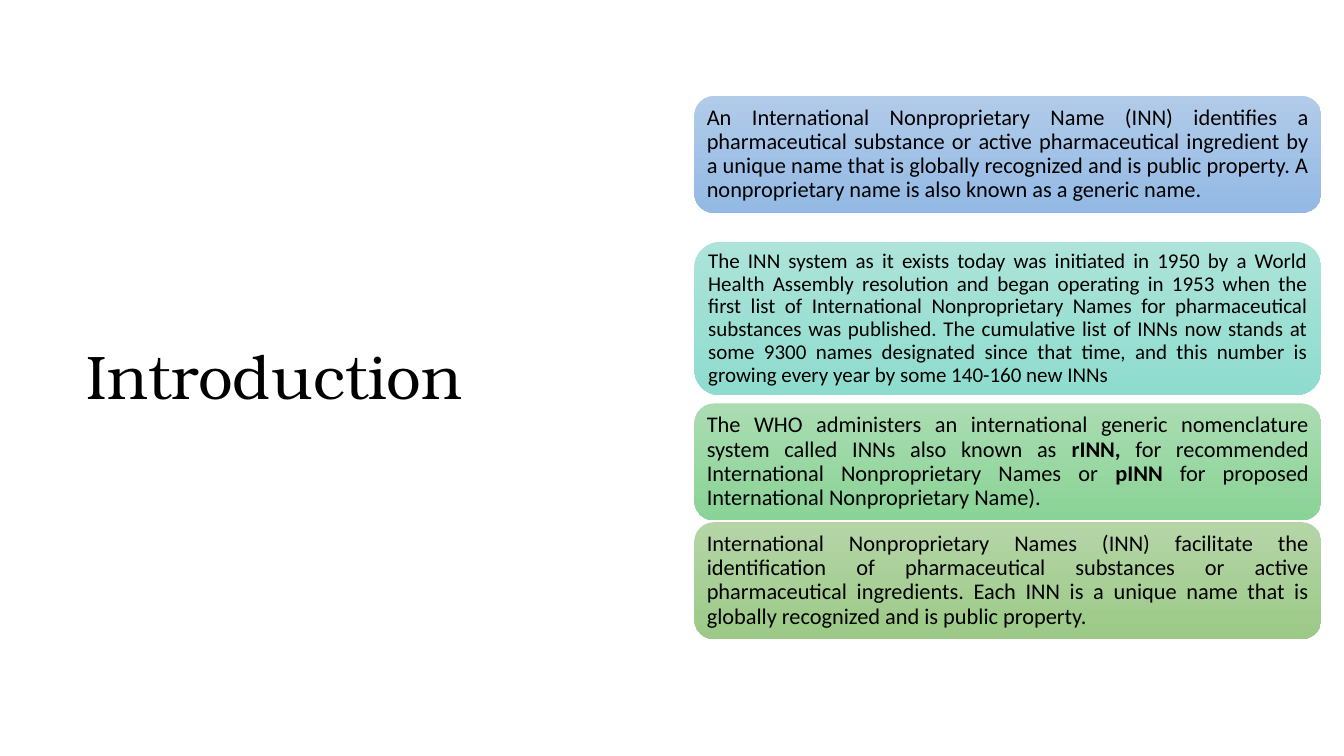
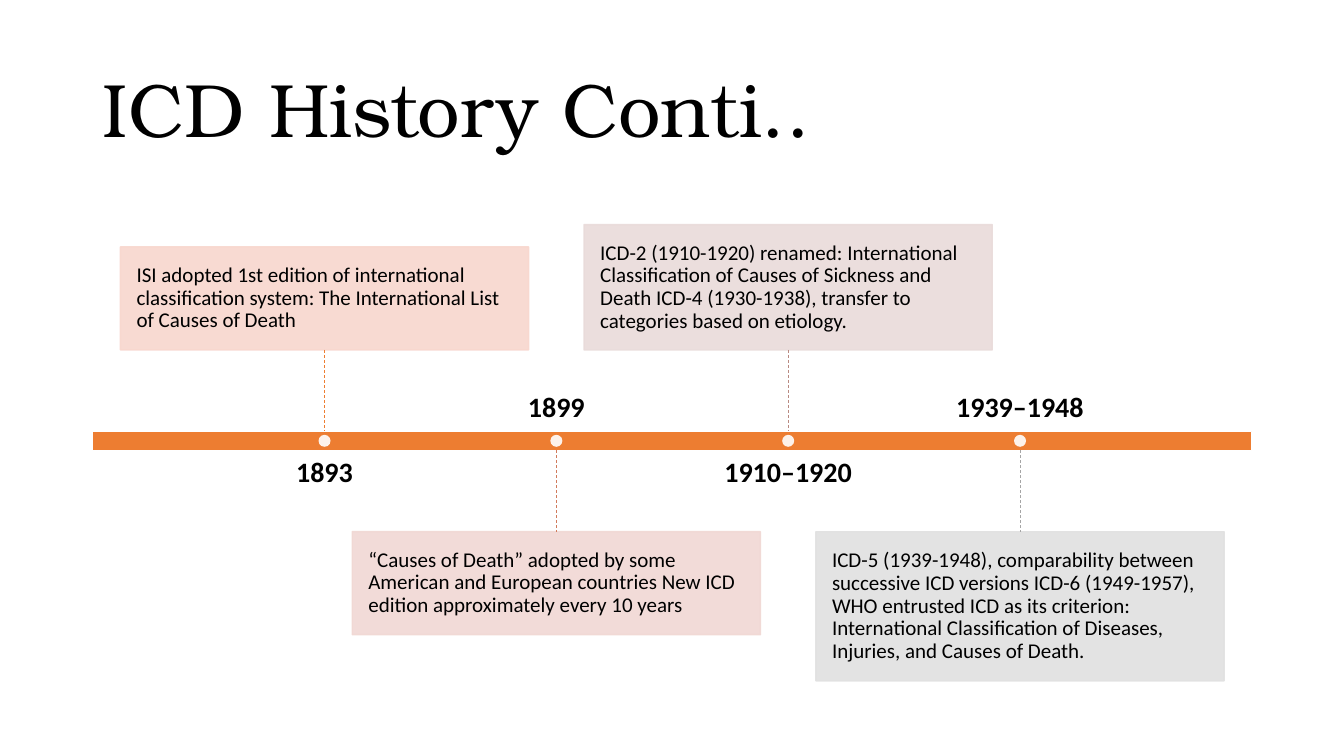
from lxml import etree
from pptx import Presentation
from pptx import util as u
from pptx.dml.color import RGBColor
from pptx.enum import dml, shapes, text
from pptx.oxml.ns import qn

Pt = u.Pt
COLORS = {"text": "000000", "white": "FFFFFF", "axis": "ED7D31"}
TITLE_FONT = "TeX Gyre Bonum"
BODY_FONT = "Calibri"


def write_text(shape, runs, size, font=BODY_FONT, align=text.PP_ALIGN.LEFT,
               anchor=text.MSO_ANCHOR.MIDDLE, margin=0):
    frame = shape.text_frame
    frame.word_wrap = True
    frame.auto_size = text.MSO_AUTO_SIZE.NONE
    frame.vertical_anchor = anchor
    frame.margin_left = frame.margin_right = Pt(margin)
    frame.margin_top = frame.margin_bottom = Pt(margin)
    paragraph = frame.paragraphs[0]
    paragraph.alignment = align
    paragraph.line_spacing = 0.9
    for wording, bold in runs:
        run = paragraph.add_run()
        run.text = wording
        run.font.name = font
        run.font.size = Pt(size)
        run.font.bold = bold
        run.font.color.rgb = RGBColor.from_string(COLORS["text"])


def add_titled_slide(wording, size, left, top, width, height):
    slide = presentation.slides.add_slide(presentation.slide_layouts[5])
    title = slide.shapes.title
    title.left, title.top = Pt(left), Pt(top)
    title.width, title.height = Pt(width), Pt(height)
    write_text(title, [(wording, False)], size, font=TITLE_FONT, margin=7.2)
    return slide


presentation = Presentation()
presentation.slide_width = Pt(960)
presentation.slide_height = Pt(540)

slide = add_titled_slide("Introduction", 44, 54.7, 56.9, 426.2, 428.4)
facts = [
    (68.5, 83.5, 16, "B1CBE9", "93B9E4", [
        ("An International Nonproprietary Name (INN) identifies a pharmaceutical "
         "substance or active pharmaceutical ingredient by a unique name that is "
         "globally recognized and is public property. A nonproprietary name is "
         "also known as a generic name.", False)]),
    (172.8, 109.4, 15, "ADE3D9", "8EDCCE", [
        ("The INN system as it exists today was initiated in 1950 by a World Health "
         "Assembly resolution and began operating in 1953 when the first list of "
         "International Nonproprietary Names for pharmaceutical substances was "
         "published. The cumulative list of INNs now stands at some 9300 names "
         "designated since that time, and this number is growing every year by "
         "some 140-160 new INNs", False)]),
    (288.2, 83.5, 16, "AADCB2", "8AD396", [
        ("The WHO administers an international generic nomenclature system called "
         "INNs also known as ", False),
        ("rINN, ", True),
        ("for recommended International Nonproprietary Names or ", False),
        ("pINN ", True),
        ("for proposed International Nonproprietary Name).", False)]),
    (373, 83.5, 16, "B5D5A7", "9CC987", [
        ("International Nonproprietary Names (INN) facilitate the identification of "
         "pharmaceutical substances or active pharmaceutical ingredients. Each INN "
         "is a unique name that is globally recognized and is public property.",
         False)]),
]
for top, height, size, light, dark, runs in facts:
    panel = slide.shapes.add_shape(shapes.MSO_SHAPE.ROUNDED_RECTANGLE,
                                   Pt(496), Pt(top), Pt(447.8), Pt(height))
    panel.shadow.inherit = False
    panel.line.fill.background()
    panel.fill.gradient()
    panel.fill.gradient_angle = 270
    for stop, color in zip(panel.fill.gradient_stops, (light, dark)):
        stop.color.rgb = RGBColor.from_string(color)
    write_text(panel, runs, size, align=text.PP_ALIGN.JUSTIFY, margin=size * 0.3)

slide = add_titled_slide("ICD History Conti..", 54, 66.2, 28.8, 774.7, 104.4)
axis_left, axis_top, axis_width, axis_height = 66.2, 308.2, 828, 13.4
axis_bottom = axis_top + axis_height
card_width, label_width, label_height = 291.6, 265, 38.9
stem, label_gap, dot_size = 58.2, 6, 8.6

axis = slide.shapes.add_shape(shapes.MSO_SHAPE.RECTANGLE, Pt(axis_left), Pt(axis_top),
                              Pt(axis_width), Pt(axis_height))
axis.shadow.inherit = False
axis.fill.solid()
axis.fill.fore_color.rgb = RGBColor.from_string(COLORS["axis"])
axis.line.color.rgb = RGBColor.from_string(COLORS["white"])
axis.line.width = Pt(1)

events = [
    ("1893", 73.6, "F8D7CE", "ED7D31",
     "ISI adopted 1st edition of international classification system: "
     "The International List of Causes of Death"),
    ("1899", 73.6, "F1D8D4", "D17B5C",
     "“Causes of Death” adopted by some American and European countries "
     "New ICD edition approximately every 10 years"),
    ("1910–1920", 89.6, "E9DBDA", "B98A82",
     "ICD-2 (1910-1920) renamed: International Classification of Causes of "
     "Sickness and Death ICD-4 (1930-1938), transfer to categories based on etiology."),
    ("1939–1948", 106.6, "E1E1E1", "A5A5A5",
     "ICD-5 (1939-1948), comparability between successive ICD versions ICD-6 "
     "(1949-1957), WHO entrusted ICD as its criterion: International "
     "Classification of Diseases, Injuries, and Causes of Death."),
]
for index, (years, height, card_color, stem_color, wording) in enumerate(events):
    center = axis_left + axis_width / (len(events) + 1) * (index + 1)
    if index % 2 == 0:
        stem_start, stem_end = axis_top - stem, axis_top
        card_top = stem_start - height
        label_top, label_anchor = axis_bottom + label_gap, text.MSO_ANCHOR.TOP
    else:
        stem_start, stem_end = axis_bottom, axis_bottom + stem
        card_top = stem_end
        label_top = axis_top - label_gap - label_height
        label_anchor = text.MSO_ANCHOR.BOTTOM

    label = slide.shapes.add_textbox(Pt(center - label_width / 2), Pt(label_top),
                                     Pt(label_width), Pt(label_height))
    write_text(label, [(years, True)], 20, align=text.PP_ALIGN.CENTER,
               anchor=label_anchor)

    card = slide.shapes.add_shape(shapes.MSO_SHAPE.RECTANGLE,
                                  Pt(center - card_width / 2), Pt(card_top),
                                  Pt(card_width), Pt(height))
    write_text(card, [(wording, False)], 15, margin=11.5)

    connector = slide.shapes.add_connector(shapes.MSO_CONNECTOR.STRAIGHT, Pt(center),
                                           Pt(stem_start), Pt(center), Pt(stem_end))
    connector.line.color.rgb = RGBColor.from_string(stem_color)
    connector.line.width = Pt(0.5)
    connector.line.dash_style = dml.MSO_LINE.DASH
    etree.SubElement(connector._element.spPr, qn("a:effectLst"))

    dot = slide.shapes.add_shape(shapes.MSO_SHAPE.OVAL, Pt(center - dot_size / 2),
                                 Pt((axis_top + axis_bottom - dot_size) / 2),
                                 Pt(dot_size), Pt(dot_size))
    dot.line.fill.background()
    card.line.color.rgb = RGBColor.from_string(card_color)
    card.line.width = Pt(1)
    for shape, color in ((card, card_color), (dot, COLORS["white"])):
        shape.shadow.inherit = False
        shape.fill.solid()
        shape.fill.fore_color.rgb = RGBColor.from_string(color)
        for element in shape._element.spPr.iter(qn("a:srgbClr")):
            etree.SubElement(element, qn("a:alpha")).set("val", "90000")

presentation.save("out.pptx")
